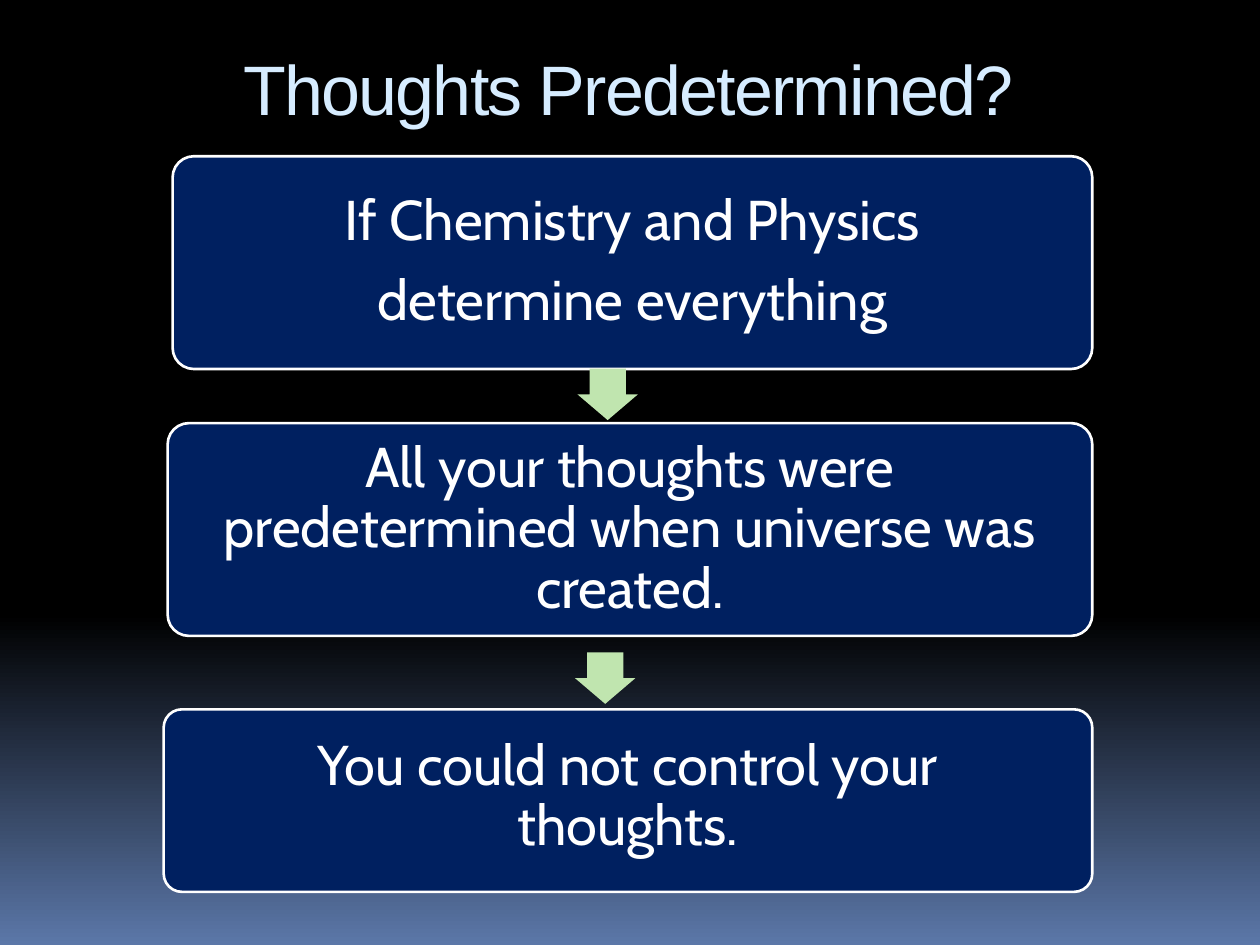
from dataclasses import dataclass

from pptx import Presentation
from pptx.dml.color import RGBColor
from pptx.enum.shapes import MSO_SHAPE
from pptx.enum.text import MSO_ANCHOR, MSO_AUTO_SIZE, PP_ALIGN
from pptx.slide import Slide
from pptx.util import Cm, Pt

ROUNDED, ARROW = MSO_SHAPE.ROUNDED_RECTANGLE, MSO_SHAPE.RIGHT_ARROW
TOP, MIDDLE = MSO_ANCHOR.TOP, MSO_ANCHOR.MIDDLE
LEFT, CENTER = PP_ALIGN.LEFT, PP_ALIGN.CENTER
NO_AUTOFIT = MSO_AUTO_SIZE.NONE


@dataclass(frozen=True)
class Theme:
    night: RGBColor = RGBColor.from_string("000000")
    horizon: RGBColor = RGBColor.from_string("5B77A8")
    title: RGBColor = RGBColor.from_string("D6ECFF")
    box: RGBColor = RGBColor.from_string("002060")
    text: RGBColor = RGBColor.from_string("FFFFFF")
    arrow: RGBColor = RGBColor.from_string("C0E5AF")
    title_font: str = "Arial"
    body_font: str = "Cabin"
    title_size: Pt = Pt(40)
    body_size: Pt = Pt(32)


@dataclass(frozen=True)
class Step:
    """One box of the argument, in centimetres."""
    text: str
    left: float
    top: float
    height: float
    side_margin: float = 0.3
    bottom_margin: float = 0.3


@dataclass(frozen=True)
class DownArrow:
    left: float
    top: float


THEME = Theme()
BOX_RIGHT = 22.02
ARROW_LENGTH, ARROW_SPREAD = 1.04, 1.22

STEPS = (
    Step("If Chemistry and Physics\ndetermine everything", 3.48, 3.15, 4.29),
    Step("All your thoughts were predetermined when universe was created.",
         3.38, 8.53, 4.29),
    Step("You could not control your thoughts.", 3.3, 14.3, 3.68, 0.69, 0.43),
)
ARROWS = (DownArrow(11.73, 7.34), DownArrow(11.68, 13.06))


def paint_background(page: Slide) -> None:
    fill = page.background.fill
    fill.gradient()
    fill.gradient_angle = 270
    stops = ((0.65, THEME.night), (1, THEME.horizon))
    for stop, (position, color) in zip(fill.gradient_stops, stops):
        stop.position = position
        stop.color.rgb = color


def write_title(page: Slide, text: str) -> None:
    title = page.shapes.title
    title.left, title.top = Cm(4.65), Cm(0.64)
    title.width, title.height = Cm(17.35), Cm(2.54)
    frame = title.text_frame
    frame.text = text
    frame.auto_size = NO_AUTOFIT
    frame.vertical_anchor = TOP
    frame.margin_top = Cm(0.28)
    para = frame.paragraphs[0]
    para.alignment = LEFT
    span = para.runs[0]
    span._r.get_or_add_rPr().set("spc", "-100")
    span.font.name = THEME.title_font
    span.font.size = THEME.title_size
    span.font.color.rgb = THEME.title


def draw_step(page: Slide, step: Step) -> None:
    box = page.shapes.add_shape(ROUNDED, Cm(step.left), Cm(step.top),
                                Cm(BOX_RIGHT - step.left), Cm(step.height))
    box.adjustments[0] = 0.1
    box.shadow.inherit = False
    box.fill.solid()
    box.fill.fore_color.rgb = THEME.box
    box.line.color.rgb = THEME.text
    box.line.width = Pt(1.5)

    frame = box.text_frame
    frame.text = step.text
    frame.word_wrap = True
    frame.vertical_anchor = MIDDLE
    frame.margin_left = frame.margin_right = Cm(step.side_margin)
    frame.margin_top, frame.margin_bottom = Cm(0.3), Cm(step.bottom_margin)
    for para in frame.paragraphs:
        para.alignment = CENTER
        para.line_spacing = 0.9
        para.space_after = Pt(11)
        for span in para.runs:
            span.font.name = THEME.body_font
            span.font.size = THEME.body_size
            span.font.color.rgb = THEME.text


def draw_arrow(page: Slide, arrow: DownArrow) -> None:
    shape = page.shapes.add_shape(ARROW, Cm(arrow.left), Cm(arrow.top),
                                  Cm(ARROW_LENGTH), Cm(ARROW_SPREAD))
    shape.rotation = 90
    shape.adjustments[0] = 0.6
    shape.adjustments[1] = 0.5
    shape.shadow.inherit = False
    shape.fill.solid()
    shape.fill.fore_color.rgb = THEME.arrow
    shape.line.fill.background()


def main() -> None:
    deck = Presentation()
    deck.slide_width, deck.slide_height = Cm(25.4), Cm(19.05)
    page = deck.slides.add_slide(deck.slide_layouts.get_by_name("Title Only"))
    paint_background(page)
    write_title(page, "Thoughts Predetermined?")
    for step in STEPS:
        draw_step(page, step)
    for arrow in ARROWS:
        draw_arrow(page, arrow)
    deck.save("out.pptx")


if __name__ == "__main__":
    main()
